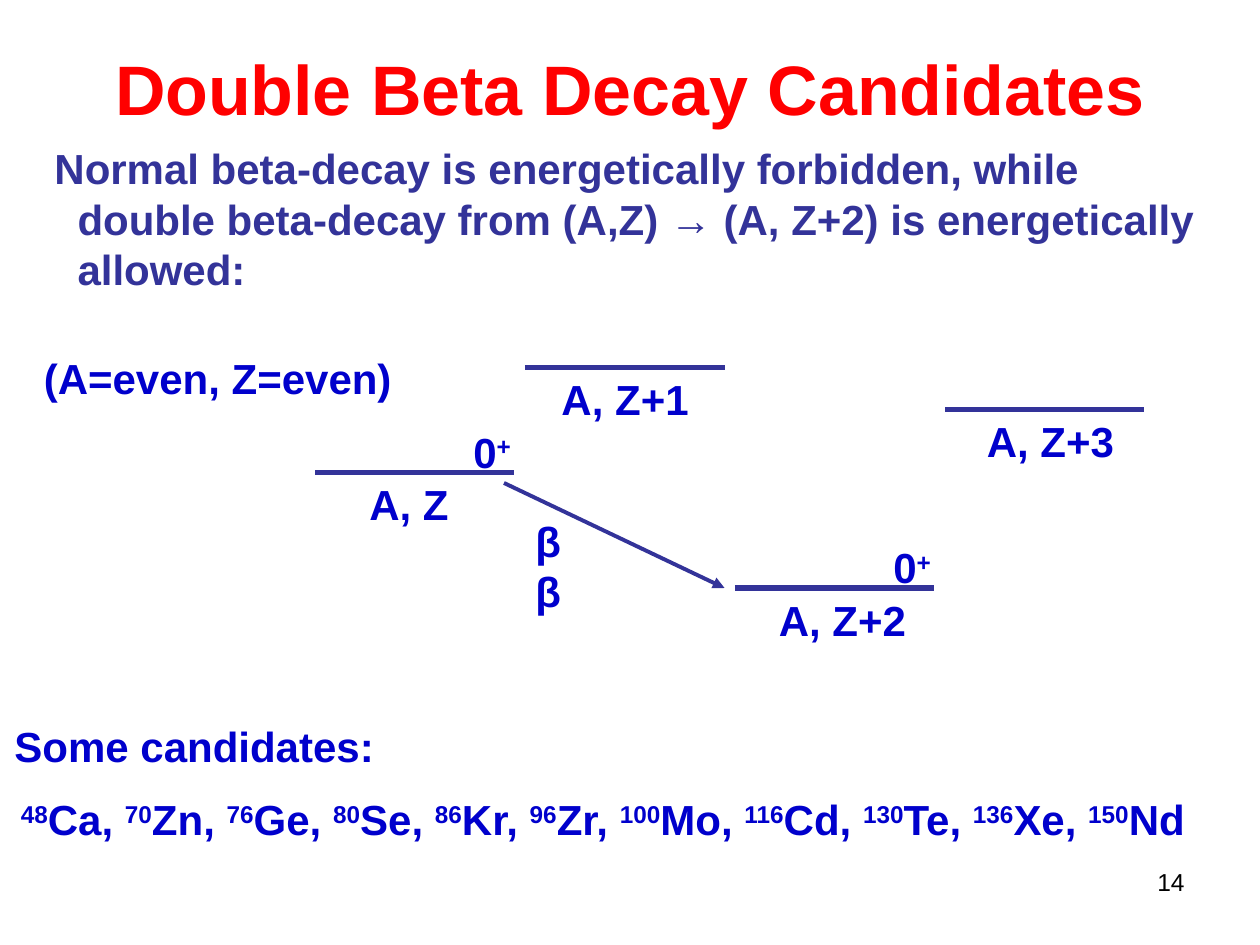
from lxml import etree
from pptx import Presentation
from pptx import util as u
from pptx.dml.color import RGBColor
from pptx.enum import shapes, text
from pptx.oxml import ns

COLUMNS, ROWS = 120, 90
CELL = u.Inches(10) // COLUMNS
RED, INDIGO, BLUE, BLACK = "FF0000", "333399", "0000CC", "000000"
LEVEL_WIDTH = 19
LEVELS = [
    ("A, Z", 30, 45, 4, True),
    ("A, Z+1", 50, 35, 2.3, False),
    ("A, Z+2", 70, 56, 3, True),
    ("A, Z+3", 90, 39, 2.8, False),
]
CANDIDATES = [
    (48, "Ca"), (70, "Zn"), (76, "Ge"), (80, "Se"), (86, "Kr"), (96, "Zr"),
    (100, "Mo"), (116, "Cd"), (130, "Te"), (136, "Xe"), (150, "Nd"),
]


def cells(count):
    """Convert a number of grid cells to a length."""
    return u.Emu(round(count * CELL))


def color(value):
    """Turn a hex string into a colour."""
    return RGBColor.from_string(value)


def add_text(page, content, left, top, width, height=6, size=24, fill=BLUE,
             bold=True, align="LEFT", anchor="TOP", hanging=0):
    """Add a text box; content is a string or (text, raised) pairs."""
    box = page.shapes.add_textbox(*map(cells, (left, top, width, height)))
    frame = box.text_frame
    frame.word_wrap = True
    frame.vertical_anchor = text.MSO_ANCHOR[anchor]
    para = frame.paragraphs[0]
    para.alignment = text.PP_ALIGN[align]
    if hanging:
        properties = para._p.get_or_add_pPr()
        properties.set("marL", str(cells(hanging)))
        properties.set("indent", str(-cells(hanging)))
    pairs = [(content, False)] if isinstance(content, str) else content
    for words, raised in pairs:
        span = para.add_run()
        span.text = words
        span.font.name = "Arial"
        span.font.size = u.Pt(size)
        span.font.bold = bold
        span.font.color.rgb = color(fill)
        if raised:
            span.font._element.set("baseline", "30000")


def add_line(page, start, end, weight=3, arrow=False):
    """Draw a straight line between two grid points."""
    line = page.shapes.add_connector(
        shapes.MSO_CONNECTOR.STRAIGHT, *map(cells, (*start, *end)))
    line.line.color.rgb = color(INDIGO)
    line.line.width = u.Pt(weight)
    if arrow:
        outline = line.line._get_or_add_ln()
        etree.SubElement(outline, ns.qn("a:tailEnd"), type="triangle")
    etree.SubElement(line._element.spPr, ns.qn("a:effectLst"))


def add_level(page, name, left, top, inset, ground_state):
    """Draw an energy level with its label and optional spin-parity."""
    add_line(page, (left, top), (left + LEVEL_WIDTH, top))
    add_text(page, name, left + inset, top, 17)
    if ground_state:
        add_text(page, [("0", False), ("+", True)], left + 13.9, top - 5, 6.4)


def isotope_spans(candidates):
    """List the isotopes as raised mass numbers and symbols."""
    spans = []
    for mass, symbol in candidates:
        spans += [(str(mass), True), (symbol + ", ", False)]
    spans[-1] = (candidates[-1][1], False)
    return spans


def main():
    """Build and save the slide."""
    deck = Presentation()
    deck.slide_width, deck.slide_height = cells(COLUMNS), cells(ROWS)
    page = deck.slides.add_slide(deck.slide_layouts[6])
    add_text(page, "Double Beta Decay Candidates", 6, 3.6, 108, 9.4,
             size=40, fill=RED, align="CENTER", anchor="MIDDLE")
    add_text(page, "Normal beta-decay is energetically forbidden, while "
             "double beta-decay from (A,Z) → (A, Z+2) is energetically "
             "allowed:", 4, 13, 112, 15.6, fill=INDIGO, hanging=2.2)
    add_text(page, "(A=even, Z=even)", 3, 33, 35.5)
    for level in LEVELS:
        add_level(page, *level)
    add_line(page, (48, 46), (69, 56), weight=2.25, arrow=True)
    add_text(page, "ββ", 49.8, 48.5, 6.8)
    add_text(page, "Some candidates:", 0.2, 68, 37.8)
    add_text(page, isotope_spans(CANDIDATES), 0.8, 75, 119.2)
    add_text(page, "14", 86, 82, 28, size=14, fill=BLACK, bold=False,
             align="RIGHT")
    deck.save("out.pptx")


if __name__ == "__main__":
    main()
